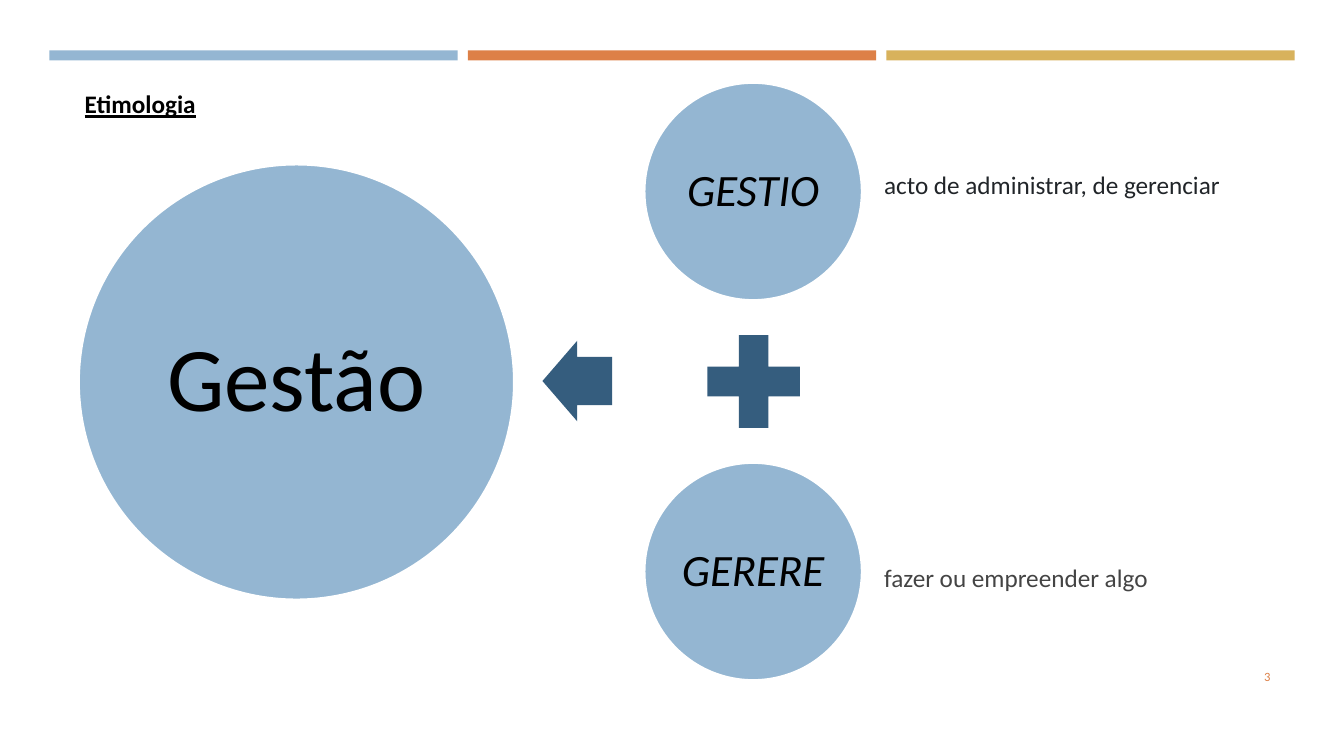
import pptx
import pptx.dml.color
import pptx.enum.shapes
import pptx.enum.text
import pptx.util

Inches = pptx.util.Inches
Shapes = pptx.enum.shapes.MSO_SHAPE
Align = pptx.enum.text.PP_ALIGN
Anchor = pptx.enum.text.MSO_ANCHOR

BLUE, ORANGE, GOLD, NAVY = "94B6D2", "DD8047", "D8B25C", "355D7E"
BLACK, WHITE = "000000", "FFFFFF"


def color(value):
    return pptx.dml.color.RGBColor.from_string(value)


class EtymologySlide:
    """Draws the elements of one slide in a shared style."""

    font_name = "Calibri"

    def __init__(self, presentation):
        self.slide = presentation.slides.add_slide(presentation.slide_layouts[5])

    def set_text(self, shape, text, size, ink, align=Align.LEFT, anchor=Anchor.TOP,
                 wrap=True, bold=False, italic=False, underline=False):
        frame = shape.text_frame
        frame.text = text
        frame.word_wrap = wrap
        frame.auto_size = pptx.enum.text.MSO_AUTO_SIZE.NONE
        frame.vertical_anchor = anchor
        paragraph = frame.paragraphs[0]
        paragraph.alignment = align
        font = paragraph.font
        font.name = self.font_name
        font.size = pptx.util.Pt(size)
        font.color.rgb = color(ink)
        font.bold = bold
        font.italic = italic
        font.underline = underline

    def title(self, text, left, top, width, height):
        shape = self.slide.shapes.title
        shape.left, shape.top = Inches(left), Inches(top)
        shape.width, shape.height = Inches(width), Inches(height)
        self.set_text(shape, text, 18, BLACK, bold=True, underline=True)

    def label(self, text, left, top, width, height, size, ink,
              align=Align.LEFT, anchor=Anchor.TOP):
        box = self.slide.shapes.add_textbox(
            Inches(left), Inches(top), Inches(width), Inches(height))
        self.set_text(box, text, size, ink, align, anchor)

    def shape(self, kind, left, top, width, height, fill):
        shape = self.slide.shapes.add_shape(
            kind, Inches(left), Inches(top), Inches(width), Inches(height))
        shape.shadow.inherit = False
        shape.fill.solid()
        shape.fill.fore_color.rgb = color(fill)
        shape.line.fill.background()
        return shape

    def circle(self, text, left, top, diameter, size, inset, italic=False):
        circle = self.shape(Shapes.OVAL, left, top, diameter, diameter, BLUE)
        circle.line.color.rgb = color(WHITE)
        circle.line.width = pptx.util.Pt(1.75)
        self.set_text(circle, text, size, BLACK, Align.CENTER, Anchor.MIDDLE,
                      wrap=False, italic=italic)
        frame = circle.text_frame
        frame.margin_left = frame.margin_right = Inches(inset)
        frame.margin_top = frame.margin_bottom = Inches(inset)
        frame.paragraphs[0].line_spacing = 0.9


def main():
    presentation = pptx.Presentation()
    presentation.slide_width = Inches(13.33)
    presentation.slide_height = Inches(7.5)
    page = EtymologySlide(presentation)

    bar_width, bar_gap = 4.05, 0.1
    for index, fill in enumerate((BLUE, ORANGE, GOLD)):
        left = 0.49 + index * (bar_width + bar_gap)
        page.shape(Shapes.RECTANGLE, left, 0.5, bar_width, 0.1, fill)

    page.title("Etimologia", 0.74, 0.83, 3.24, 0.4)

    page.circle("Gestão", 0.78, 1.63, 4.32, 65, 0.09)
    arrow = page.shape(Shapes.RIGHT_ARROW, 5.38, 3.38, 0.69, 0.8, NAVY)
    arrow.rotation = 180
    arrow.adjustments[0] = 0.6
    page.shape(Shapes.MATH_PLUS, 6.85, 3.16, 1.25, 1.25, NAVY)

    roots = (
        ("GESTIO", 0.82, "acto de administrar, de gerenciar", 1.63, "212529"),
        ("GERERE", 4.59, "fazer ou empreender algo", 5.53, "444444"),
    )
    for root, circle_top, meaning, meaning_top, ink in roots:
        page.circle(root, 6.39, circle_top, 2.16, 32, 0.04, italic=True)
        page.label(meaning, 8.67, meaning_top, 3.59, 0.4, 18, ink)

    page.label("3", 11.55, 6.51, 1.15, 0.4, 9, ORANGE, Align.RIGHT, Anchor.MIDDLE)
    presentation.save("out.pptx")


if __name__ == "__main__":
    main()
